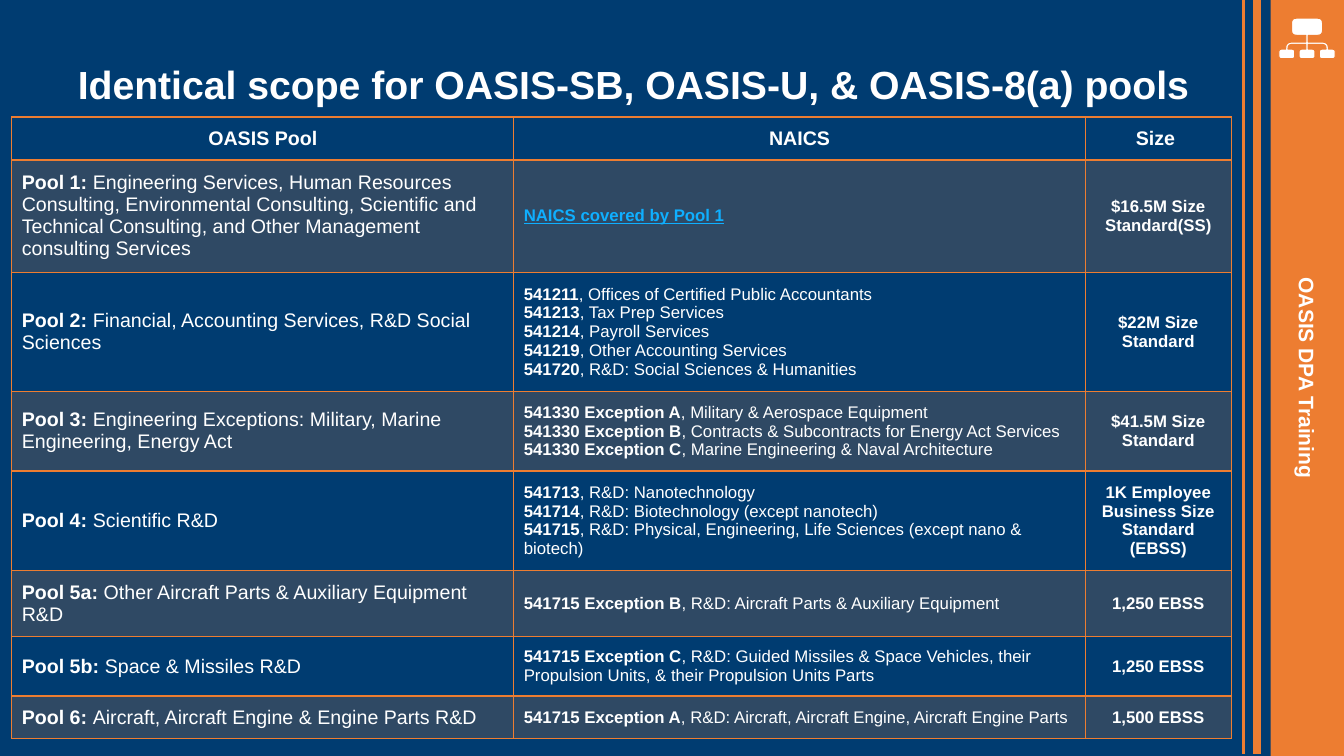
from lxml import etree
from pptx import Presentation
from pptx import util as u
from pptx.dml.color import RGBColor
from pptx.enum import shapes, text
from pptx.oxml import parse_xml
from pptx.oxml.ns import nsdecls, qn


class Theme:
    font = "Arial"
    navy = RGBColor.from_string("003C71")
    orange = RGBColor.from_string("ED7D31")
    white = RGBColor.from_string("FFFFFF")
    link = RGBColor.from_string("0FAFFF")
    title, side, label, detail = 28, 15, 14, 12


def write(tf, lines, size, color=Theme.white, align=text.PP_ALIGN.LEFT, underline=False):
    for i, (strong, plain) in enumerate(lines):
        p = tf.paragraphs[0] if i == 0 else tf.add_paragraph()
        p.alignment = align
        for words, bold in ((strong, True), (plain, False)):
            if words:
                r = p.add_run()
                r.text = words
                r.font.name = Theme.font
                r.font.size = u.Pt(size)
                r.font.bold = bold
                r.font.underline = underline
                r.font.color.rgb = color


def toward(start, end, distance):
    dx, dy = end[0] - start[0], end[1] - start[1]
    share = distance / (abs(dx) + abs(dy))
    return start[0] + dx * share, start[1] + dy * share


prs = Presentation()
prs.slide_width, prs.slide_height = u.Cm(33.87), u.Cm(19.05)
s = prs.slides.add_slide(prs.slide_layouts[5])
s.background.fill.solid()
s.background.fill.fore_color.rgb = Theme.navy
inset = u.Cm(0.25)
center = text.PP_ALIGN.CENTER
middle = text.MSO_ANCHOR.MIDDLE

for x, width in ((31.68, 6), (31.33, 2.25)):
    c = s.shapes.add_connector(shapes.MSO_CONNECTOR.STRAIGHT, u.Cm(x), 0, u.Cm(x), u.Cm(19))
    c.line.color.rgb = Theme.orange
    c.line.width = u.Pt(width)
    etree.SubElement(c._element.spPr, qn("a:effectLst"))

side = s.shapes.add_shape(shapes.MSO_SHAPE.RECTANGLE, u.Cm(23.42), u.Cm(8.6), u.Cm(19.05), u.Cm(1.85))
side.rotation = 90
side.shadow.inherit = False
side.fill.solid()
side.fill.fore_color.rgb = Theme.orange
side.line.fill.background()
side.text_frame.vertical_anchor = middle
write(side.text_frame, [("OASIS DPA Training", "")], Theme.side, align=center)

icon_x = 32.94
right_half = [
    (0.39, 0.46, 0.12), (0.39, 0.89, 0.12), (0.03, 0.89, 0), (0.03, 1.06, 0),
    (0.54, 1.06, 0.16), (0.54, 1.24, 0), (0.71, 1.24, 0.07), (0.71, 1.48, 0.07),
    (0.31, 1.48, 0.07), (0.31, 1.24, 0.07), (0.48, 1.24, 0), (0.48, 1.12, 0.1),
    (0.03, 1.12, 0), (0.03, 1.24, 0), (0.2, 1.24, 0.07), (0.2, 1.48, 0.07),
]
corners = right_half + [(-x, y, radius) for x, y, radius in reversed(right_half)]
outline = []
for i, corner in enumerate(corners):
    a = toward(corner, corners[i - 1], corner[2])
    b = toward(corner, corners[(i + 1) % len(corners)], corner[2])
    for t in (0, 0.25, 0.5, 0.75, 1) if corner[2] else (0,):
        x, y = ((1 - t) ** 2 * a[k] + 2 * t * (1 - t) * corner[k] + t ** 2 * b[k] for k in (0, 1))
        outline.append((u.Cm(icon_x + x), u.Cm(y)))
fb = s.shapes.build_freeform(*outline[0])
fb.add_line_segments(outline[1:], close=True)
icon = fb.convert_to_shape()
icon.shadow.inherit = False
icon.fill.solid()
icon.fill.fore_color.rgb = Theme.white
icon.line.color.rgb = Theme.orange
icon.line.width = u.Pt(0.75)

title = s.shapes.title
title.left, title.top, title.width, title.height = map(u.Cm, (1.71, 0.02, 29.34, 2.94))
tf = title.text_frame
tf.word_wrap = True
tf.auto_size = text.MSO_AUTO_SIZE.NONE
tf.vertical_anchor = text.MSO_ANCHOR.BOTTOM
tf.margin_left = tf.margin_right = tf.margin_top = tf.margin_bottom = inset
write(tf, [("Identical scope for OASIS-SB, OASIS-U, & OASIS-8(a) pools", "")], Theme.title)

pools = [
    (("Pool 1: ", "Engineering Services, Human Resources Consulting, Environmental Consulting, "
      "Scientific and Technical Consulting, and Other Management consulting Services"),
     [("NAICS covered by Pool 1", "")],
     "$16.5M Size Standard(SS)"),
    (("Pool 2: ", "Financial, Accounting Services, R&D Social Sciences"),
     [("541211", ", Offices of Certified Public Accountants"),
      ("541213", ", Tax Prep Services"),
      ("541214", ", Payroll Services"),
      ("541219", ", Other Accounting Services"),
      ("541720", ", R&D: Social Sciences & Humanities")],
     "$22M Size Standard"),
    (("Pool 3: ", "Engineering Exceptions: Military, Marine Engineering, Energy Act"),
     [("541330 Exception A", ", Military & Aerospace Equipment"),
      ("541330 Exception B", ", Contracts & Subcontracts for Energy Act Services"),
      ("541330 Exception C", ", Marine Engineering & Naval Architecture")],
     "$41.5M Size Standard"),
    (("Pool 4: ", "Scientific R&D"),
     [("541713", ", R&D: Nanotechnology"),
      ("541714", ", R&D: Biotechnology (except nanotech)"),
      ("541715", ", R&D: Physical, Engineering, Life Sciences (except nano & biotech)")],
     "1K Employee Business Size Standard (EBSS)"),
    (("Pool 5a: ", "Other Aircraft Parts & Auxiliary Equipment R&D"),
     [("541715 Exception B", ", R&D: Aircraft Parts & Auxiliary Equipment")],
     "1,250 EBSS"),
    (("Pool 5b: ", "Space & Missiles R&D"),
     [("541715 Exception C", ", R&D: Guided Missiles & Space Vehicles, their Propulsion Units, "
       "& their Propulsion Units Parts")],
     "1,250 EBSS"),
    (("Pool 6: ", "Aircraft, Aircraft Engine & Engine Parts R&D"),
     [("541715 Exception A", ", R&D: Aircraft, Aircraft Engine, Aircraft Engine Parts")],
     "1,500 EBSS"),
]
widths = [12.65, 14.4, 3.68]
heights = [1.08, 2.83, 3, 2.01, 2.5, 1.67, 1.5, 1.08]
frame = s.shapes.add_table(len(heights), len(widths), u.Cm(0.3), u.Cm(2.95),
                           u.Cm(sum(widths)), u.Cm(sum(heights)))
table = frame.table
table.first_row = table.horz_banding = False
for column, width in zip(table.columns, widths):
    column.width = u.Cm(width)
for row, height in zip(table.rows, heights):
    row.height = u.Cm(height)

for i, row in enumerate(table.rows):
    for cell in row.cells:
        cell.vertical_anchor = middle
        cell.margin_left = cell.margin_right = cell.margin_top = cell.margin_bottom = inset
        tcPr = cell._tc.get_or_add_tcPr()
        for edge in "LRTB":
            tcPr.append(parse_xml(
                f'<a:ln{edge} {nsdecls("a")} w="{u.Pt(1)}"><a:solidFill>'
                f'<a:srgbClr val="{Theme.orange}"/></a:solidFill></a:ln{edge}>'))
        if i % 2:
            cell.fill.solid()
            cell.fill.fore_color.rgb = Theme.orange
            tint = tcPr.find(qn("a:solidFill")).find(qn("a:srgbClr"))
            etree.SubElement(tint, qn("a:alpha")).set("val", "20000")
        else:
            cell.fill.background()

for j, heading in enumerate(("OASIS Pool", "NAICS", "Size ")):
    write(table.cell(0, j).text_frame, [(heading, "")], Theme.label, align=center)
for i, (pool, codes, size) in enumerate(pools, 1):
    linked = i == 1
    write(table.cell(i, 0).text_frame, [pool], Theme.label)
    write(table.cell(i, 1).text_frame, codes, Theme.detail,
          color=Theme.link if linked else Theme.white, underline=linked)
    write(table.cell(i, 2).text_frame, [(size, "")], Theme.detail, align=center)

prs.save("out.pptx")
